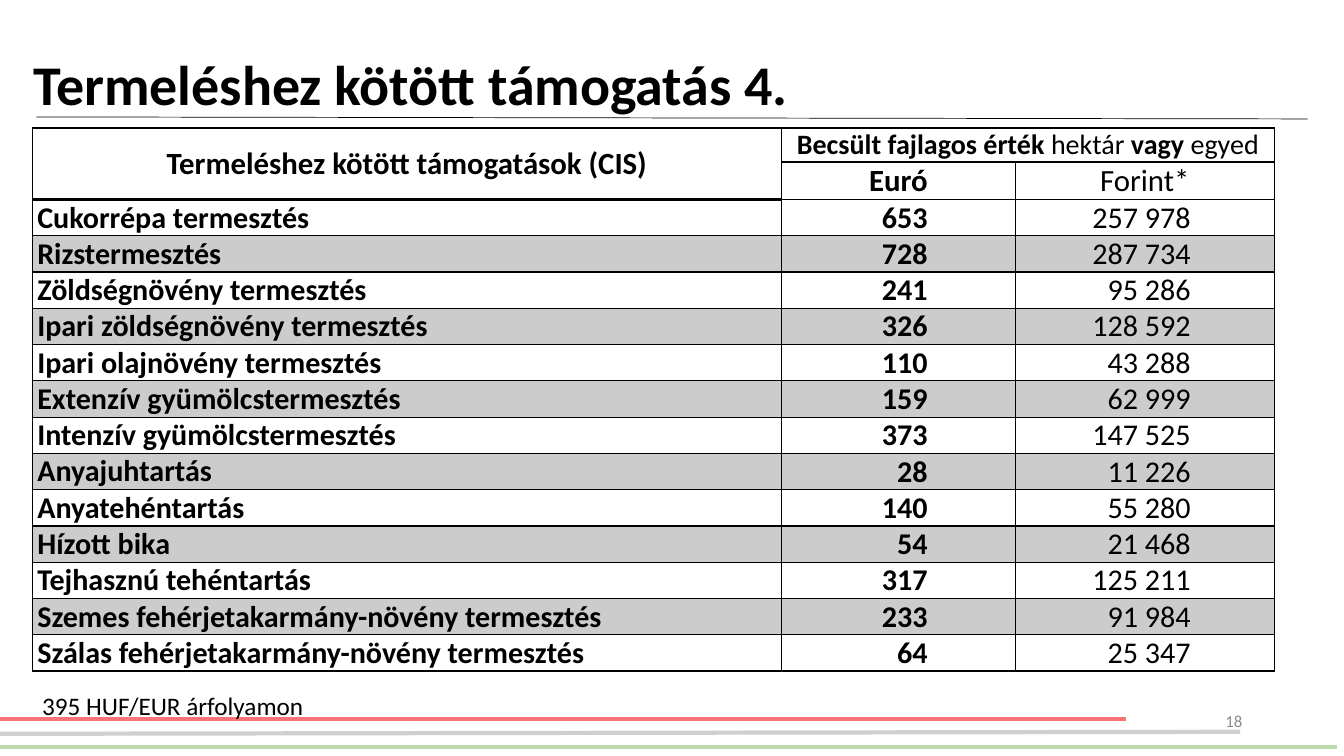
import dataclasses
import lxml.etree
import pptx
import pptx.dml.color
import pptx.enum.shapes
import pptx.enum.text
import pptx.oxml.ns
import pptx.util

PX = 9144  # EMU per px, 100 px to the inch
FONT = "Calibri"
RGB = pptx.dml.color.RGBColor
BLACK = RGB(0x00, 0x00, 0x00)
RED = RGB(0xF9, 0x73, 0x76)
GREEN = RGB(0xBE, 0xDC, 0xAA)
SILVER = RGB(0xD0, 0xCE, 0xCE)
GREY = RGB(0x8C, 0x8C, 0x8C)
ALIGN = pptx.enum.text.PP_ALIGN
ANCHOR = pptx.enum.text.MSO_ANCHOR
qn = pptx.oxml.ns.qn


@dataclasses.dataclass
class Rule:
    x1: int
    y1: int
    x2: int
    y2: int
    color: RGB
    width: float


@dataclasses.dataclass
class Grant:
    name: str
    euro: int
    forint: int


@dataclasses.dataclass
class Style:
    size: float
    bold: bool
    align: ALIGN
    anchor: ANCHOR = ANCHOR.MIDDLE
    left: int = 5
    right: int = 5


RULES = [
    Rule(0, 713, 1117, 713, RED, 3),
    Rule(0, 741, 1326, 741, GREEN, 3),
    Rule(0, 728, 1230, 726, SILVER, 3),
    Rule(36, 116, 1297, 118, BLACK, 0.5),
]
GRANTS = [
    Grant("Cukorrépa termesztés", 653, 257978),
    Grant("Rizstermesztés", 728, 287734),
    Grant("Zöldségnövény termesztés", 241, 95286),
    Grant("Ipari zöldségnövény termesztés", 326, 128592),
    Grant("Ipari olajnövény termesztés", 110, 43288),
    Grant("Extenzív gyümölcstermesztés", 159, 62999),
    Grant("Intenzív gyümölcstermesztés", 373, 147525),
    Grant("Anyajuhtartás", 28, 11226),
    Grant("Anyatehéntartás", 140, 55280),
    Grant("Hízott bika", 54, 21468),
    Grant("Tejhasznú tehéntartás", 317, 125211),
    Grant("Szemes fehérjetakarmány-növény termesztés", 233, 91984),
    Grant("Szálas fehérjetakarmány-növény termesztés", 64, 25347),
]
HEAD = Style(22, True, ALIGN.CENTER)
NAME = Style(21.5, True, ALIGN.LEFT, ANCHOR.BOTTOM)
EURO = Style(21.5, True, ALIGN.RIGHT, left=0, right=87)
FORINT = Style(21.5, False, ALIGN.RIGHT, left=0, right=83)
COLS = [743, 232, 257]
ROWS = [34, 37] + [36] * len(GRANTS)


def set_font(par, size: float, color: RGB = BLACK, bold: bool = False) -> None:
    par.font.name = FONT
    par.font.size = pptx.util.Pt(size)
    par.font.bold = bold
    par.font.color.rgb = color


def add_rule(slide, rule: Rule) -> None:
    ends = [v * PX for v in (rule.x1, rule.y1, rule.x2, rule.y2)]
    line = slide.shapes.add_connector(
        pptx.enum.shapes.MSO_CONNECTOR.STRAIGHT, *ends)
    line.line.color.rgb = rule.color
    line.line.width = pptx.util.Pt(rule.width)
    lxml.etree.SubElement(line._element.spPr, qn("a:effectLst"))


def add_label(slide, box: tuple[int, ...], text: str, size: float,
              color: RGB, align: ALIGN, wrap: bool) -> None:
    frame = slide.shapes.add_textbox(*(v * PX for v in box)).text_frame
    frame.word_wrap = wrap
    frame.vertical_anchor = ANCHOR.MIDDLE if wrap else ANCHOR.TOP
    par = frame.paragraphs[0]
    par.text = text
    par.alignment = align
    set_font(par, size, color)


def write_cell(cell, text: str, style: Style) -> None:
    cell.vertical_anchor = style.anchor
    cell.margin_left, cell.margin_right = style.left * PX, style.right * PX
    cell.margin_top = cell.margin_bottom = 0
    par = cell.text_frame.paragraphs[0]
    par.text = text
    par.alignment = style.align
    set_font(par, style.size, bold=style.bold)


def set_fill(cell, shade: bool) -> None:
    if not shade:
        cell.fill.background()
        return
    cell.fill.solid()
    cell.fill.fore_color.rgb = BLACK
    color = cell._tc.tcPr.find(".//" + qn("a:srgbClr"))
    lxml.etree.SubElement(color, qn("a:alpha"), val="20000")


def set_edges(cell, top: int, low: int) -> None:
    sides = {"a:lnL": 1, "a:lnR": 1, "a:lnT": top, "a:lnB": low}
    for spot, (tag, width) in enumerate(sides.items()):
        edge = lxml.etree.Element(qn(tag), w=str(pptx.util.Pt(width)))
        fill = lxml.etree.SubElement(edge, qn("a:solidFill"))
        lxml.etree.SubElement(fill, qn("a:srgbClr"), val=str(BLACK))
        cell._tc.tcPr.insert(spot, edge)


def add_grid(slide) -> None:
    box = (32, 127, sum(COLS), sum(ROWS))
    grid = slide.shapes.add_table(
        len(ROWS), len(COLS), *(v * PX for v in box)).table
    grid.first_row = grid.horz_banding = False
    for col, width in zip(grid.columns, COLS):
        col.width = width * PX
    for row, height in zip(grid.rows, ROWS):
        row.height = height * PX

    # Header
    grid.cell(0, 0).merge(grid.cell(1, 0))
    grid.cell(0, 1).merge(grid.cell(0, 2))
    write_cell(grid.cell(0, 0), "Termeléshez kötött támogatások (CIS)", HEAD)
    write_cell(grid.cell(0, 1), "", dataclasses.replace(HEAD, size=20))
    par = grid.cell(0, 1).text_frame.paragraphs[0]
    parts = ["Becsült fajlagos érték ", "hektár", " vagy ", "egyed"]
    for spot, text in enumerate(parts):
        run = par.add_run()
        run.text = text
        run.font.bold = spot % 2 == 0
    write_cell(grid.cell(1, 1), "Euró", HEAD)
    write_cell(grid.cell(1, 2), "Forint*", dataclasses.replace(HEAD, bold=False))

    # Grants
    for row, grant in enumerate(GRANTS, 2):
        forint = f"{grant.forint:,}".replace(",", " ")
        write_cell(grid.cell(row, 0), grant.name, NAME)
        write_cell(grid.cell(row, 1), str(grant.euro), EURO)
        write_cell(grid.cell(row, 2), forint, FORINT)

    # Fills and borders
    for row in range(len(ROWS)):
        for col in range(len(COLS)):
            cell = grid.cell(row, col)
            set_fill(cell, row > 1 and row % 2 == 1)
            thick = row == 0 or (row, col) == (1, 0)
            set_edges(cell, 2 if row == 1 else 1, 2 if thick else 1)


def add_title(slide, text: str) -> None:
    title = slide.shapes.title
    title.left, title.top = 23 * PX, 14 * PX
    title.width, title.height = 1150 * PX, 145 * PX
    title.text_frame.vertical_anchor = ANCHOR.MIDDLE
    par = title.text_frame.paragraphs[0]
    par.text = text
    par.alignment = ALIGN.LEFT
    par.line_spacing = 0.9
    set_font(par, 40, bold=True)


def main() -> None:
    deck = pptx.Presentation()
    deck.slide_width, deck.slide_height = 1333 * PX, 750 * PX
    slide = deck.slides.add_slide(deck.slide_layouts[5])
    add_title(slide, "Termeléshez kötött támogatás 4.")
    for rule in RULES:
        add_rule(slide, rule)
    add_label(slide, (942, 695, 300, 40), "18", 12, GREY, ALIGN.RIGHT, True)
    add_grid(slide)
    add_label(slide, (32, 680, 282, 40), "395 HUF/EUR árfolyamon", 18,
              BLACK, ALIGN.LEFT, False)
    deck.save("out.pptx")


if __name__ == "__main__":
    main()
